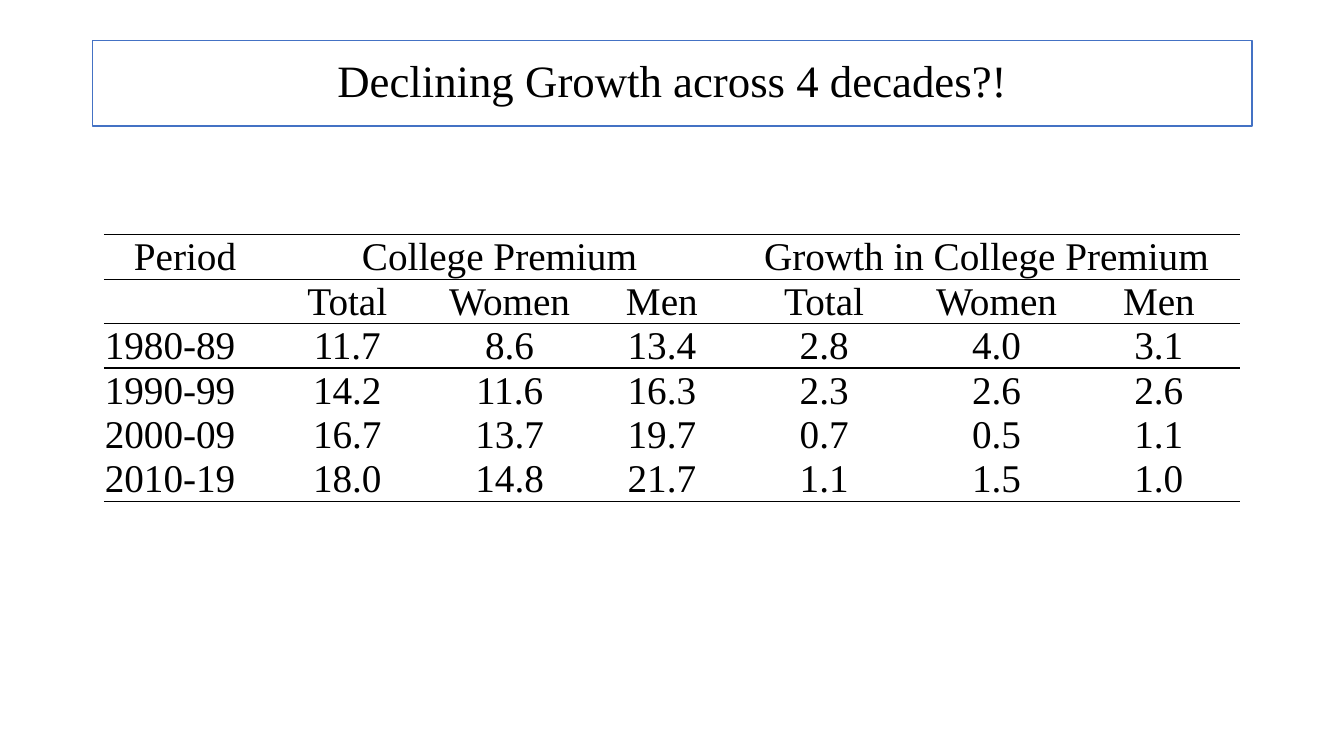
"""Builds a slide with a table of the college premium by decade."""
from lxml import etree
from pptx import Presentation
from pptx.dml.color import RGBColor
from pptx.enum import shapes, text
from pptx.oxml import ns
from pptx.util import Inches, Pt

TITLE = "Declining Growth across 4 decades?!"
ROWS = [
    ("Period", "College Premium", "", "", "Growth in College Premium", "", ""),
    ("", "Total", "Women", "Men", "Total", "Women", "Men"),
    ("1980-89", "11.7", "8.6", "13.4", "2.8", "4.0", "3.1"),
    ("1990-99", "14.2", "11.6", "16.3", "2.3", "2.6", "2.6"),
    ("2000-09", "16.7", "13.7", "19.7", "0.7", "0.5", "1.1"),
    ("2010-19", "18.0", "14.8", "21.7", "1.1", "1.5", "1.0"),
]
WIDTHS = (1.61, 1.61, 1.61, 1.41, 1.81, 1.61, 1.61)
HEIGHT = 0.44
HEADS = 2
GROUPS = ((1, 3), (4, 6))
RULES = {0, 1, 2, 3, len(ROWS)}
COLORS = {"ink": "000000", "paper": "FFFFFF", "frame": "4472C4"}
CELL = {
    "margin_left": Inches(0.01), "margin_right": Inches(0.01),
    "margin_top": Inches(0.01), "margin_bottom": 0,
    "vertical_anchor": text.MSO_ANCHOR.BOTTOM,
}


def apply(item, values):
    for name, value in values.items():
        setattr(item, name, value)


def color(name):
    return RGBColor.from_string(COLORS[name])


def write(para, words, size, align):
    para.alignment = align
    run = para.add_run()
    run.text = words
    apply(run.font, {"name": "Times New Roman", "size": Pt(size), "bold": False})
    run.font.color.rgb = color("ink")


def border(cell, side, shown):
    props = cell._tc.get_or_add_tcPr()
    line = etree.SubElement(props, ns.qn("a:ln" + side), w=str(Pt(1)))
    fill = etree.SubElement(line, ns.qn("a:solidFill" if shown else "a:noFill"))
    if shown:
        etree.SubElement(fill, ns.qn("a:srgbClr"), val=COLORS["ink"])


def add_title(slide):
    box = slide.shapes.add_shape(
        shapes.MSO_SHAPE.RECTANGLE,
        Inches(0.92), Inches(0.4), Inches(11.5), Inches(0.85))
    box.shadow.inherit = False
    box.fill.solid()
    box.fill.fore_color.rgb = color("paper")
    box.line.color.rgb = color("frame")
    box.line.width = Pt(1)
    frame = box.text_frame
    apply(frame, {"word_wrap": True, "vertical_anchor": text.MSO_ANCHOR.MIDDLE})
    frame.paragraphs[0].line_spacing = 0.9
    write(frame.paragraphs[0], TITLE, 32, text.PP_ALIGN.CENTER)


def add_grid(slide):
    table = slide.shapes.add_table(
        len(ROWS), len(WIDTHS), Inches(1.03), Inches(2.33),
        Inches(sum(WIDTHS)), Inches(HEIGHT * len(ROWS))).table
    apply(table, {"first_row": False, "horz_banding": False})
    for col, width in zip(table.columns, WIDTHS):
        col.width = Inches(width)
    for first, last in GROUPS:
        table.cell(0, first).merge(table.cell(0, last))
    for r, row in enumerate(ROWS):
        table.rows[r].height = Inches(HEIGHT)
        for c, words in enumerate(row):
            cell = table.cell(r, c)
            apply(cell, CELL)
            for side, shown in (("L", False), ("R", False),
                                ("T", r in RULES), ("B", r + 1 in RULES)):
                border(cell, side, shown)
            cell.fill.background()
            if words:
                left = c == 0 and r >= HEADS
                align = text.PP_ALIGN.LEFT if left else text.PP_ALIGN.CENTER
                write(cell.text_frame.paragraphs[0], words, 28, align)


def main():
    deck = Presentation()
    apply(deck, {"slide_width": Inches(13.33), "slide_height": Inches(7.5)})
    slide = deck.slides.add_slide(deck.slide_layouts[6])
    add_title(slide)
    add_grid(slide)
    deck.save("out.pptx")


if __name__ == "__main__":
    main()
